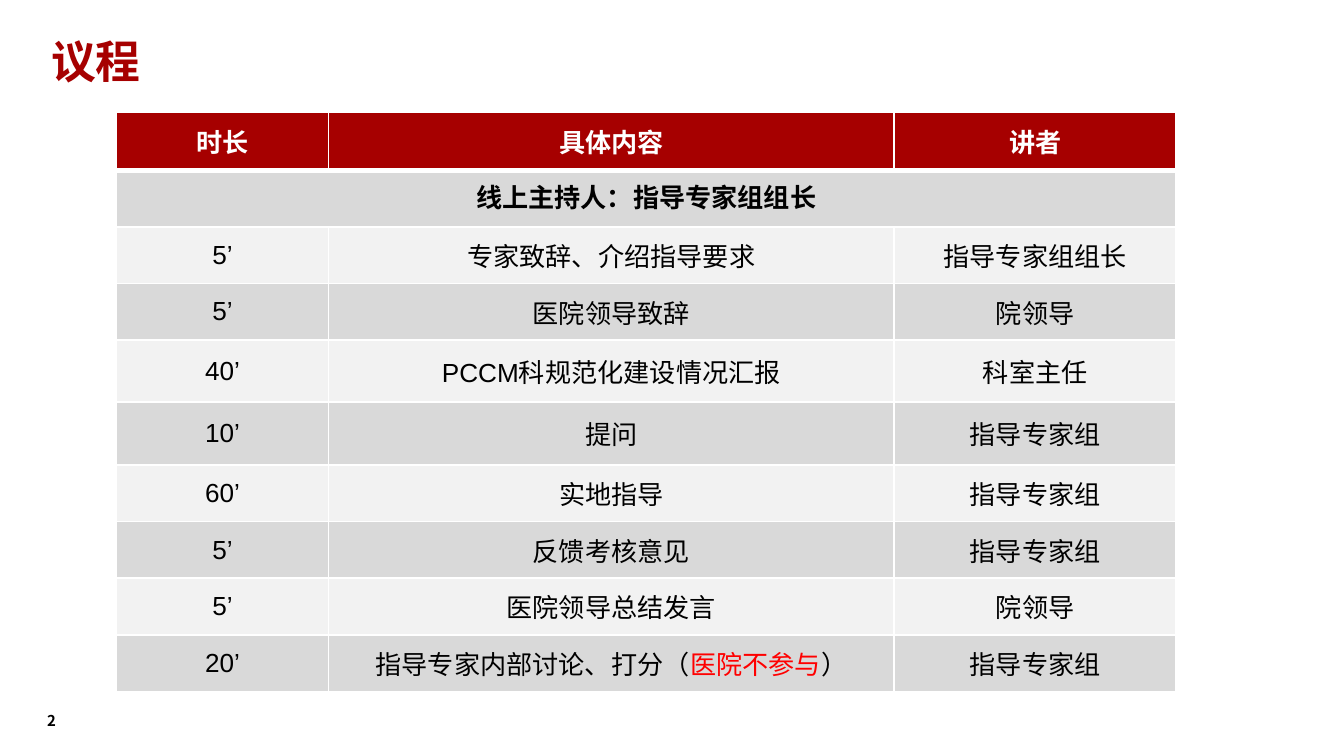
from lxml.etree import SubElement
from pptx import Presentation
from pptx.dml.color import RGBColor
from pptx.enum.text import MSO_ANCHOR, PP_ALIGN
from pptx.oxml.ns import qn
from pptx.util import Cm, Pt

CJK_FONT = "Noto Sans CJK SC"
RED, WHITE, BLACK, ALERT = "A60000", "FFFFFF", "000000", "FF0000"
BANDS = ("D9D9D9", "F2F2F2")
COLUMN_WIDTHS = (4.01, 10.69, 5.33)
ROW_HEIGHT = 1.07
TALL_ROWS = {0: 1.09, 4: 1.17, 5: 1.19}
HEADINGS = ("时长", "具体内容", "讲者")
HOST = "线上主持人：指导专家组组长"
AGENDA = (
    ("5’", "专家致辞、介绍指导要求", "指导专家组组长"),
    ("5’", "医院领导致辞", "院领导"),
    ("40’", "PCCM科规范化建设情况汇报", "科室主任"),
    ("10’", "提问", "指导专家组"),
    ("60’", "实地指导", "指导专家组"),
    ("5’", "反馈考核意见", "指导专家组"),
    ("5’", "医院领导总结发言", "院领导"),
    ("20’", (("指导专家内部讨论、打分（", BLACK), ("医院不参与", ALERT), ("）", BLACK)), "指导专家组"),
)


def color(value):
    return RGBColor.from_string(value)


def add_span(para, text, size, fill, bold=False, font=CJK_FONT):
    span = para.add_run()
    span.text = text
    span.font.size = Pt(size)
    span.font.bold = bold
    span.font.name = font
    span.font.color.rgb = color(fill)
    SubElement(span.font._element, qn("a:ea"), typeface=CJK_FONT)


def set_margins(box, horizontal, vertical):
    box.margin_left = box.margin_right = Cm(horizontal)
    box.margin_top = box.margin_bottom = Cm(vertical)


def place(shape, left, top, width, height):
    shape.left, shape.top = Cm(left), Cm(top)
    shape.width, shape.height = Cm(width), Cm(height)


def add_title(page, text):
    title = page.shapes.title
    place(title, 0.71, 0.51, 14.71, 3.68)
    title.text_frame.vertical_anchor = MSO_ANCHOR.TOP
    para = title.text_frame.paragraphs[0]
    para.alignment = PP_ALIGN.LEFT
    add_span(para, text, 24, RED, bold=True)


def add_page_number(page, text):
    box = page.shapes.add_textbox(Cm(0.89), Cm(13.46), Cm(1.09), Cm(0.46))
    box.text_frame.word_wrap = True
    set_margins(box.text_frame, 0, 0)
    add_span(box.text_frame.paragraphs[0], text, 8, BLACK, bold=True)


def set_borders(cell, top, bottom):
    properties = cell._tc.get_or_add_tcPr()
    for side, width in (("L", 1), ("R", 1), ("T", top), ("B", bottom)):
        line = SubElement(properties, qn(f"a:ln{side}"), w=str(Pt(width)))
        fill = SubElement(line, qn("a:solidFill"))
        SubElement(fill, qn("a:srgbClr"), val=WHITE)


def style_cell(cell, row):
    set_borders(cell, 3 if row == 1 else 1, 3 if row == 0 else 1)
    cell.fill.solid()
    cell.fill.fore_color.rgb = color(RED if row == 0 else BANDS[(row - 1) % 2])
    if row != 1:
        cell.vertical_anchor = MSO_ANCHOR.MIDDLE
        set_margins(cell, 0.15, 0)


def write_cell(cell, content, row):
    para = cell.text_frame.paragraphs[0]
    para.alignment = PP_ALIGN.CENTER
    base = WHITE if row == 0 else BLACK
    spans = ((content, base),) if isinstance(content, str) else content
    for text, fill in spans:
        add_span(para, text, 14, fill, bold=row < 2, font="Arial")


def add_agenda(page):
    rows = (HEADINGS, (HOST,), *AGENDA)
    heights = [TALL_ROWS.get(row, ROW_HEIGHT) for row in range(len(rows))]
    table = page.shapes.add_table(
        len(rows), len(COLUMN_WIDTHS), Cm(2.2), Cm(2.13),
        Cm(sum(COLUMN_WIDTHS)), Cm(sum(heights)),
    ).table
    for column, width in zip(table.columns, COLUMN_WIDTHS):
        column.width = Cm(width)
    for row, (contents, height) in enumerate(zip(rows, heights)):
        table.rows[row].height = Cm(height)
        for cell in table.rows[row].cells:
            style_cell(cell, row)
        for column, content in enumerate(contents):
            write_cell(table.cell(row, column), content, row)
    table.cell(1, 0).merge(table.cell(1, len(COLUMN_WIDTHS) - 1))


def main():
    deck = Presentation()
    deck.slide_width, deck.slide_height = Cm(25.4), Cm(14.29)
    page = deck.slides.add_slide(deck.slide_layouts[5])
    add_page_number(page, "2")
    add_title(page, "议程")
    add_agenda(page)
    deck.save("out.pptx")


if __name__ == "__main__":
    main()
